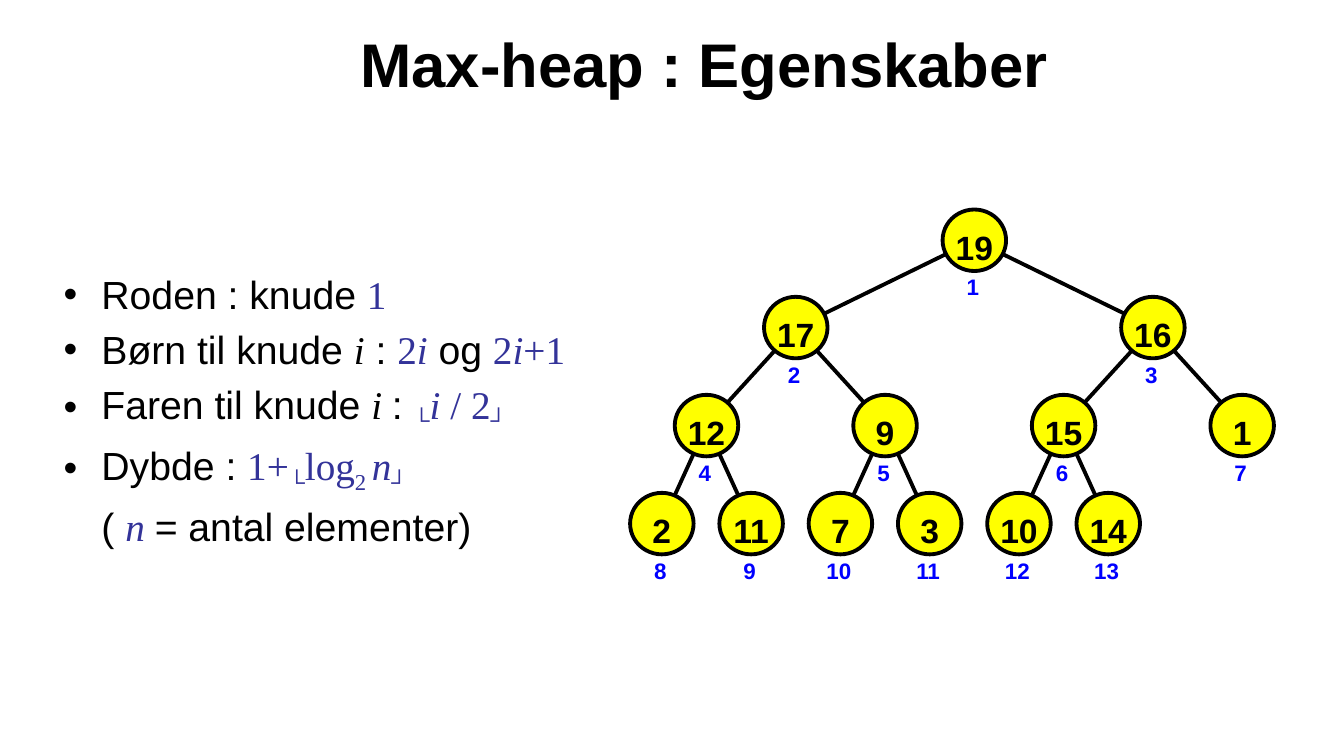
from lxml.etree import SubElement
from pptx import Presentation
from pptx.dml.color import RGBColor
from pptx.enum.shapes import MSO_SHAPE
from pptx.enum.text import MSO_ANCHOR, MSO_AUTO_SIZE, PP_ALIGN
from pptx.oxml.ns import qn
from pptx.util import Cm, Pt

COLORS = {"black": "000000", "math": "333399", "node": "FFFF00", "index": "0000FF"}
RUN_STYLES = {
    "plain": ("Arial", "black", False, 0),
    "variable": ("Times New Roman", "black", True, 0),
    "math": ("Times New Roman", "math", False, 0),
    "math variable": ("Times New Roman", "math", True, 0),
    "subscript": ("Times New Roman", "math", False, -25000),
}
PROPERTIES = [
    [("Roden : knude ", "plain"), ("1", "math")],
    [("Børn til knude ", "plain"), ("i", "variable"), (" : ", "plain"),
     ("2", "math"), ("i", "math variable"), (" og ", "plain"),
     ("2", "math"), ("i", "math variable"), ("+1", "math")],
    [("Faren til knude ", "plain"), ("i ", "variable"), (": ", "plain"),
     ("└", "subscript"), ("i ", "math variable"), ("/ 2", "math"), ("┘", "subscript")],
    [("Dybde : ", "plain"), ("1+", "math"), ("└", "subscript"), ("log", "math"),
     ("2 ", "subscript"), ("n", "math variable"), ("┘", "subscript")],
    [("( ", "plain"), ("n ", "math variable"), ("= antal elementer)", "plain")],
]
HEAP = [19, 17, 16, 12, 9, 15, 1, 2, 11, 7, 3, 10, 14]
LEVEL_TOPS = [0, 2.2, 4.67, 7.14]
LEAF_STEP = 2.25
NODE_WIDTH, NODE_HEIGHT = 1.6, 1.55


def rgb(name):
    """Return the named colour."""
    return RGBColor.from_string(COLORS[name])


def place(shape, box):
    """Move a shape to a box of left, top, width and height in centimetres."""
    shape.left, shape.top, shape.width, shape.height = map(Cm, box)


def format_paragraph(paragraph, size, color):
    """Centre a paragraph in bold Arial."""
    paragraph.alignment = PP_ALIGN.CENTER
    font = paragraph.font
    font.name, font.size, font.bold = "Arial", Pt(size), True
    font.color.rgb = rgb(color)


def add_title(slide, box):
    """Fill the title placeholder."""
    title = slide.shapes.title
    place(title, box)
    frame = title.text_frame
    frame.text = "Max-heap : Egenskaber"
    frame.auto_size = MSO_AUTO_SIZE.NONE
    frame.vertical_anchor = MSO_ANCHOR.MIDDLE
    frame.margin_left = Cm(2.33)
    format_paragraph(frame.paragraphs[0], 44, "black")


def add_properties(slide, box):
    """Fill the body placeholder with the heap properties."""
    body = slide.placeholders[1]
    place(body, box)
    frame = body.text_frame
    frame.auto_size = MSO_AUTO_SIZE.NONE
    for number, parts in enumerate(PROPERTIES):
        paragraph = frame.add_paragraph() if number else frame.paragraphs[0]
        for text, style in parts:
            run = paragraph.add_run()
            run.text = text
            name, color, italic, baseline = RUN_STYLES[style]
            run.font.name, run.font.italic = name, italic
            run.font.color.rgb = rgb(color)
            if baseline:
                run._r.get_or_add_rPr().set("baseline", str(baseline))
    remark = paragraph._p.get_or_add_pPr()
    remark.set("indent", "0")
    SubElement(remark, qn("a:buNone"))
    for paragraph in frame.paragraphs:
        paragraph.font.size = Pt(28)


def node_corner(index, box):
    """Return the left and top of a heap node from its index."""
    level = index.bit_length() - 1
    span = 2 ** (len(LEVEL_TOPS) - 1 - level)
    slot = span * (index - 2 ** level + 0.5) - 0.5
    return box[0] + slot * LEAF_STEP, box[1] + LEVEL_TOPS[level]


def node_center(index, box):
    """Return the centre of a heap node."""
    left, top = node_corner(index, box)
    return Cm(left + NODE_WIDTH / 2), Cm(top + NODE_HEIGHT / 2)


def add_branches(shapes, parent, box):
    """Draw the two edges from a parent to its children."""
    left, top, right = (node_center(index, box) for index in (2 * parent, parent, 2 * parent + 1))
    builder = shapes.build_freeform(*left)
    builder.add_line_segments([top, right], close=False)
    branches = builder.convert_to_shape()
    branches.shadow.inherit = False
    branches.fill.background()
    branches.line.color.rgb = rgb("black")
    branches.line.width = Pt(2.75)


def write_label(shape, text, size, color):
    """Write one centred label without insets in a shape."""
    frame = shape.text_frame
    frame.word_wrap = False
    frame.vertical_anchor = MSO_ANCHOR.TOP
    frame.margin_left = frame.margin_right = frame.margin_top = frame.margin_bottom = 0
    frame.text = str(text)
    format_paragraph(frame.paragraphs[0], size, color)


def add_node(shapes, index, key, box):
    """Draw a node with its key inside and its index below."""
    left, top = node_corner(index, box)
    node = shapes.add_shape(MSO_SHAPE.OVAL, Cm(left), Cm(top), Cm(NODE_WIDTH), Cm(NODE_HEIGHT))
    node.shadow.inherit = False
    node.fill.solid()
    node.fill.fore_color.rgb = rgb("node")
    node.line.color.rgb = rgb("black")
    node.line.width = Pt(2.75)
    write_label(node, key, 24, "black")
    node.text_frame.margin_top = Cm(0.2)
    label = shapes.add_textbox(Cm(left + 0.44), Cm(top + 1.61), Cm(0.64), Cm(0.69))
    write_label(label, index, 16, "index")


def add_heap(slide, box):
    """Draw the heap as a grouped binary tree."""
    shapes = slide.shapes.add_group_shape().shapes
    for parent in range(1, len(HEAP) // 2 + 1):
        add_branches(shapes, parent, box)
    for index, key in enumerate(HEAP, 1):
        add_node(shapes, index, key, box)


def main():
    """Build and save the slide."""
    presentation = Presentation()
    presentation.slide_width, presentation.slide_height = Cm(33.87), Cm(19.05)
    slide = presentation.slides.add_slide(presentation.slide_layouts[1])
    add_title(slide, (5.29, 0, 22.86, 3.18))
    add_properties(slide, (1.35, 6.68, 13.34, 7.19))
    add_heap(slide, (15.88, 5.28))
    presentation.save("out.pptx")


if __name__ == "__main__":
    main()
